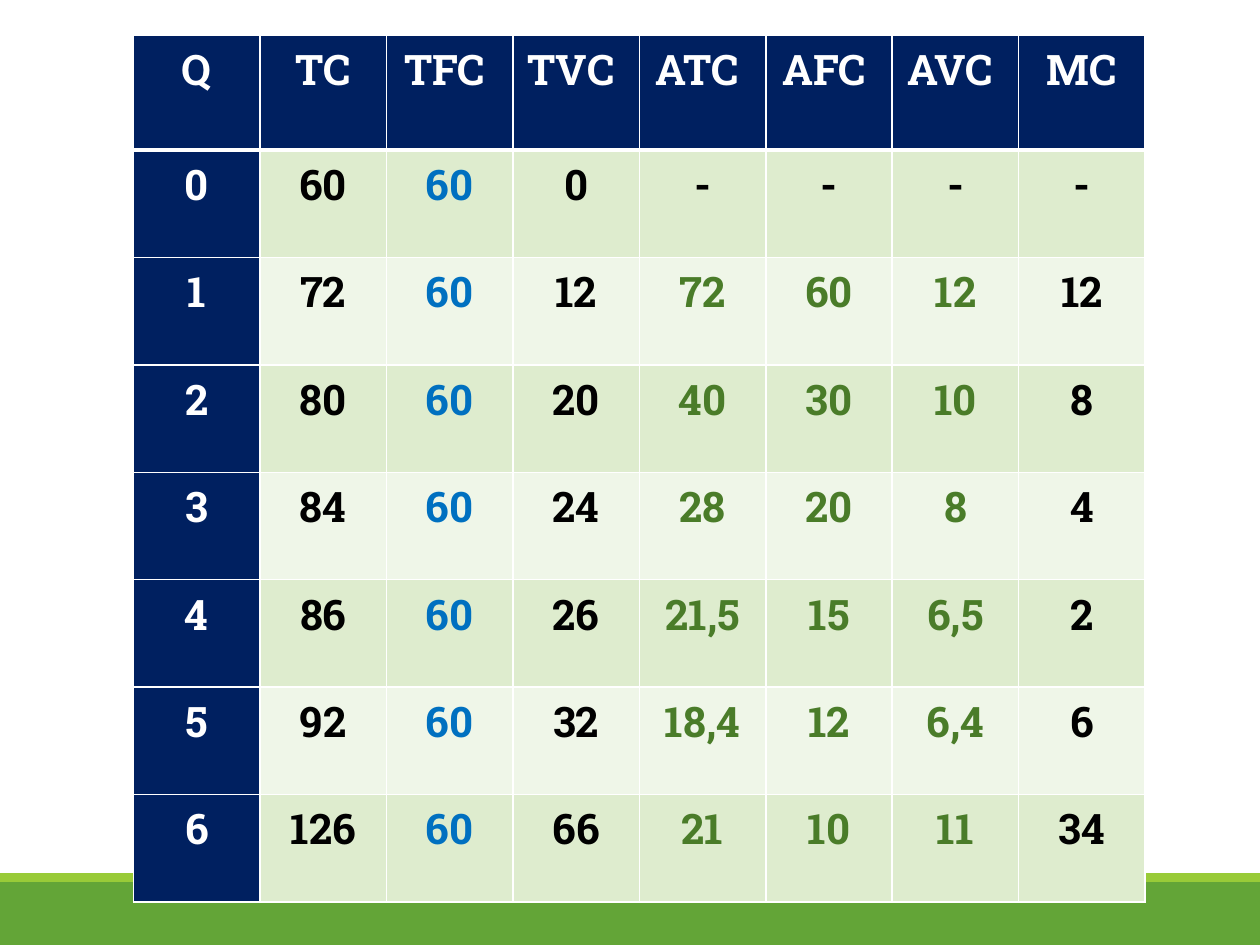
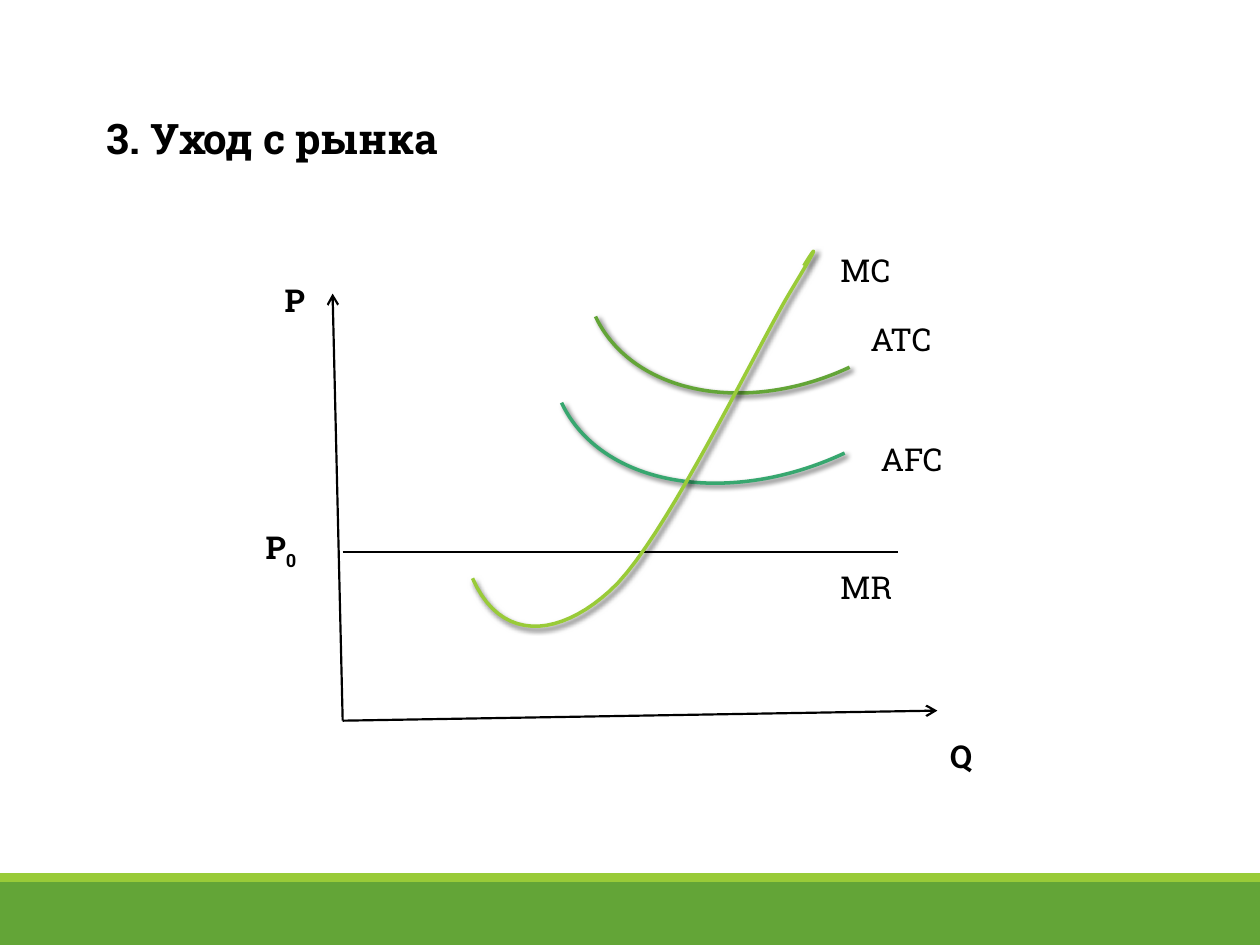
from lxml.etree import SubElement
from pptx import Presentation
from pptx.dml.color import RGBColor
from pptx.enum.shapes import MSO_CONNECTOR, MSO_SHAPE
from pptx.enum.text import MSO_AUTO_SIZE, PP_ALIGN
from pptx.oxml import parse_xml
from pptx.oxml.ns import nsdecls, qn
from pptx.util import Inches, Pt

FONT = "Roboto Slab"
BLACK, WHITE, NAVY, BLUE = "000000", "FFFFFF", "002060", "0070C0"
GREEN, LIME, TEAL, DARK_GREEN = "63A537", "99CB38", "37A76F", "4A7C29"
BAND_FILLS = ["EFF6E8", "DEECCE"]
SHADOW = (f'<a:outerShdw {nsdecls("a")} blurRad="38100" dist="25400" dir="2700000" '
          'rotWithShape="0"><a:srgbClr val="000000"><a:alpha val="60000"/>'
          '</a:srgbClr></a:outerShdw>')


def color(value):
    return RGBColor.from_string(value)


def add_run(p, text, size, bold=False, fill=BLACK):
    r = p.add_run()
    r.text = text
    for name, value in {"name": FONT, "size": Pt(size), "bold": bold}.items():
        setattr(r.font, name, value)
    r.font.color.rgb = color(fill)
    return r


prs = Presentation()
prs.slide_width, prs.slide_height = Inches(10), Inches(7.5)

# Both slides with the shared footer bands
for _ in range(2):
    s = prs.slides.add_slide(prs.slide_layouts[6])
    for top, height, fill in [(7, 0.5, GREEN), (6.93, 0.07, LIME)]:
        sp = s.shapes.add_shape(MSO_SHAPE.RECTANGLE, 0, Inches(top),
                                Inches(10), Inches(height))
        sp.shadow.inherit = False
        sp.fill.solid()
        sp.fill.fore_color.rgb = color(fill)
        sp.line.fill.background()
table_slide, graph_slide = prs.slides

# Slide 1: cost table
costs = [
    ["Q", "TC", "TFC ", "TVC ", "ATC ", "AFC ", "AVC ", "MC"],
    ["0", "60", "60", "0", "-", "-", "-", "-"],
    ["1", "72", "60", "12", "72", "60", "12", "12"],
    ["2", "80", "60", "20", "40", "30", "10", "8"],
    ["3", "84", "60", "24", "28", "20", "8", "4"],
    ["4", "86", "60", "26", "21,5", "15", "6,5", "2"],
    ["5", "92", "60", "32", "18,4", "12", "6,4", "6"],
    ["6", "126", "60", "66", "21", "10", "11", "34"],
]
column_colors = [WHITE, BLACK, BLUE, BLACK, DARK_GREEN, DARK_GREEN, DARK_GREEN, BLACK]
table = table_slide.shapes.add_table(8, 8, Inches(1.06), Inches(0.28),
                                     Inches(8.03), Inches(6.88)).table
for i, row in enumerate(costs):
    table.rows[i].height = Inches(0.91) if i == 0 else Inches((6.88 - 0.91) / 7)
    for j, text in enumerate(row):
        cell = table.cell(i, j)
        tcPr = cell._tc.get_or_add_tcPr()
        for side in ["L", "R", "T", "B"]:
            heavy = (i, side) in [(0, "B"), (1, "T")]
            ln = SubElement(tcPr, qn(f"a:ln{side}"), w=str(Pt(3 if heavy else 1)))
            SubElement(SubElement(ln, qn("a:solidFill")), qn("a:srgbClr"), val=WHITE)
        cell.fill.solid()
        cell.fill.fore_color.rgb = color(NAVY if i == 0 or j == 0 else BAND_FILLS[i % 2])
        p = cell.text_frame.paragraphs[0]
        p.alignment = PP_ALIGN.CENTER
        ink = WHITE if i == 0 else BLACK if text == "-" else column_colors[j]
        add_run(p, text, 24, True, ink)

# Slide 2: axes and the horizontal MR line
for x1, y1, x2, y2, width, arrow in [
    (2.72, 5.72, 2.64, 2.33, 1.25, True),
    (2.72, 5.72, 7.44, 5.64, 1.25, True),
    (2.72, 4.38, 7.13, 4.38, 1, False),
]:
    line = graph_slide.shapes.add_connector(MSO_CONNECTOR.STRAIGHT, Inches(x1), Inches(y1),
                                            Inches(x2), Inches(y2))
    line.line.color.rgb = color(BLACK)
    line.line.width = Pt(width)
    SubElement(line._element.spPr, qn("a:effectLst"))
    if arrow:
        SubElement(line.line._get_or_add_ln(), qn("a:tailEnd"), type="arrow")

# ATC and AFC arcs
curves = []
for x, y, w, h, stroke in [(4.57, 0.59, 3.31, 2.44, GREEN), (4.28, 1.09, 3.73, 2.63, TEAL)]:
    sp = graph_slide.shapes.add_shape(MSO_SHAPE.ARC, Inches(x), Inches(y),
                                      Inches(w), Inches(h))
    sp.rotation = 154.9
    curves.append((sp, stroke))

# MC curve, sampled from cubic segments
knots = [(3.75, 4.59), (3.97, 5.09), (4.42, 5.07), (4.84, 4.69), (5.26, 4.32),
         (6.01, 2.75), (6.27, 2.32), (6.53, 1.89), (6.47, 1.96), (6.38, 2.11)]
steps = 20
points = []
for start in range(0, 9, 3):
    for k in range(1, steps + 1):
        t = k / steps
        weights = [(1 - t) ** 3, 3 * t * (1 - t) ** 2, 3 * t ** 2 * (1 - t), t ** 3]
        points.append([Inches(sum(w * knot[axis] for w, knot in
                                  zip(weights, knots[start:start + 4])))
                       for axis in (0, 1)])
builder = graph_slide.shapes.build_freeform(Inches(knots[0][0]), Inches(knots[0][1]))
builder.add_line_segments(points, close=False)
curves.append((builder.convert_to_shape(), LIME))

# Shared curve style
for sp, stroke in curves:
    sp.fill.background()
    sp.line.color.rgb = color(stroke)
    sp.line.width = Pt(2)
    sp.shadow.inherit = False
    sp._element.spPr.find(qn("a:effectLst")).append(parse_xml(SHADOW))

# Title and labels
for x, y, w, h, text, subscript, size, bold in [
    (0.75, 0.84, 5.28, 0.51, "3. Уход с рынка", "", 24, True),
    (2.16, 2.18, 0.32, 0.4, "P", "", 18, True),
    (2.01, 4.14, 0.63, 0.4, "P", "0", 18, True),
    (7.44, 5.8, 0.32, 0.4, "Q", "", 18, True),
    (6.81, 2.49, 1.18, 0.4, "ATC", "", 18, False),
    (6.89, 3.44, 1.18, 0.4, "AFC", "", 18, False),
    (6.57, 1.94, 1.18, 0.4, "MC", "", 18, False),
    (6.57, 4.46, 1.18, 0.4, "MR", "", 18, False),
]:
    tf = graph_slide.shapes.add_textbox(Inches(x), Inches(y), Inches(w), Inches(h)).text_frame
    tf.word_wrap = True
    tf.auto_size = MSO_AUTO_SIZE.SHAPE_TO_FIT_TEXT
    p = tf.paragraphs[0]
    add_run(p, text, size, bold)
    if subscript:
        r = add_run(p, subscript, size, bold)
        r._r.get_or_add_rPr().set("baseline", "-25000")

prs.save("out.pptx")
